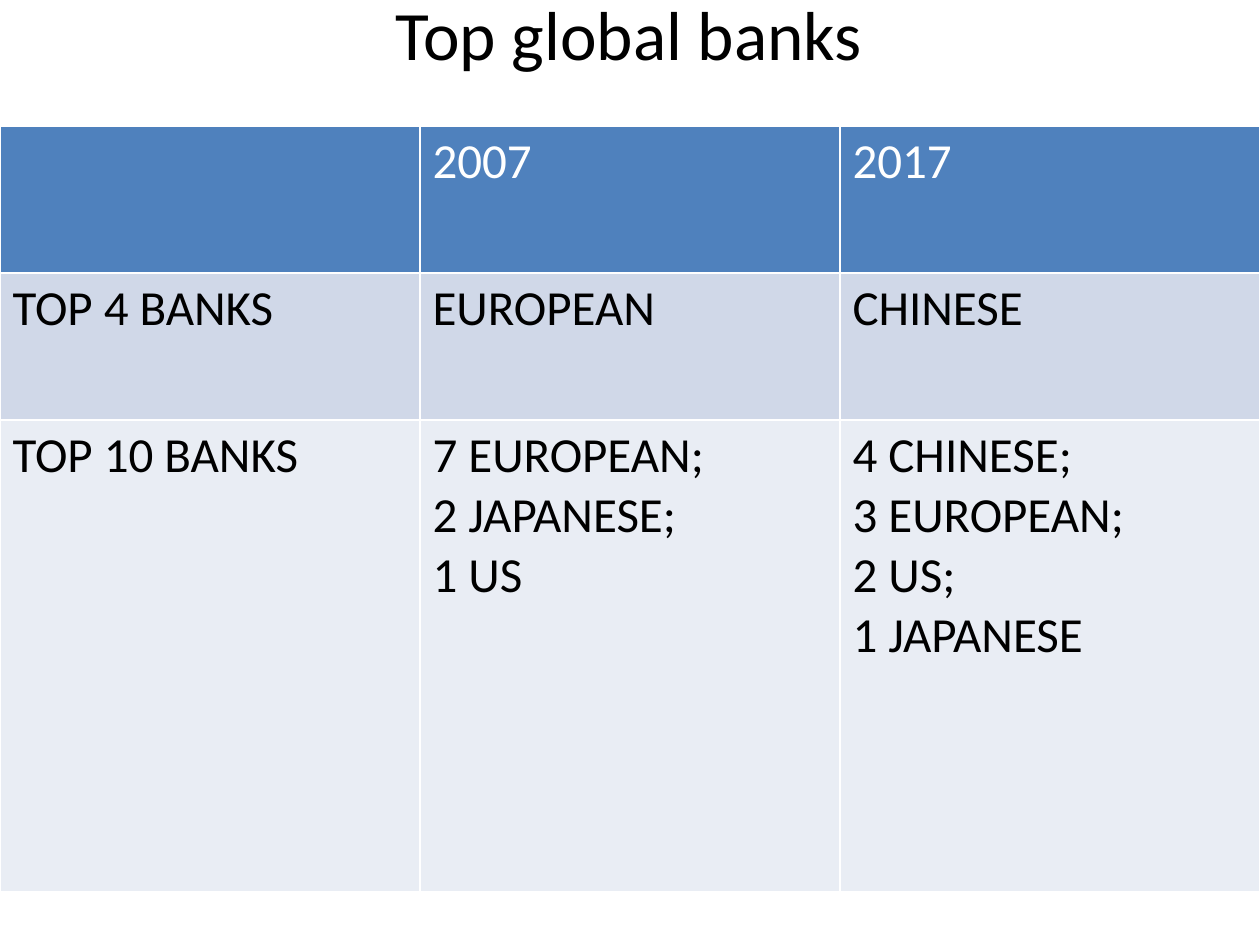
from pptx import Presentation
from pptx import util as u
from pptx.dml.color import RGBColor
from pptx.enum import text

PX = u.Inches(1) // 126
FONT = "Calibri"
BLACK = RGBColor(0x00, 0x00, 0x00)
WHITE = RGBColor(0xFF, 0xFF, 0xFF)
HEADER_BLUE = RGBColor(0x4F, 0x81, 0xBD)
BAND_DARK = RGBColor(0xD0, 0xD8, 0xE8)
BAND_LIGHT = RGBColor(0xE9, 0xED, 0xF4)

COLUMN_WIDTH = 420
# Each row: height, fill, text colour, cell texts
BANK_ROWS = [
    (147, HEADER_BLUE, WHITE, ["", "2007", "2017"]),
    (147, BAND_DARK, BLACK, ["TOP 4 BANKS", "EUROPEAN", "CHINESE"]),
    (472, BAND_LIGHT, BLACK, [
        "TOP 10 BANKS",
        "7 EUROPEAN;\n2 JAPANESE;\n1 US",
        "4 CHINESE;\n3 EUROPEAN;\n2 US;\n1 JAPANESE",
    ]),
]


def px(*lengths):
    return [u.Emu(length * PX) for length in lengths]


def format_runs(text_frame, size, color):
    for paragraph in text_frame.paragraphs:
        for run in paragraph.runs:
            run.font.name = FONT
            run.font.size = u.Pt(size)
            run.font.bold = False
            run.font.color.rgb = color


def add_title(slide, title):
    shape = slide.shapes.add_textbox(*px(62, 8, 1134, 50))
    text_frame = shape.text_frame
    text_frame.word_wrap = True
    text_frame.auto_size = text.MSO_AUTO_SIZE.NONE
    text_frame.vertical_anchor = text.MSO_ANCHOR.MIDDLE
    text_frame.text = title
    text_frame.paragraphs[0].alignment = text.PP_ALIGN.CENTER
    format_runs(text_frame, 39.6, BLACK)


def add_bank_table(slide, left, top):
    columns = len(BANK_ROWS[0][3])
    height = sum(row[0] for row in BANK_ROWS)
    table = slide.shapes.add_table(
        len(BANK_ROWS), columns, *px(left, top, columns * COLUMN_WIDTH, height)
    ).table
    for column in table.columns:
        column.width = px(COLUMN_WIDTH)[0]
    for row, (row_height, fill, color, values) in zip(table.rows, BANK_ROWS):
        row.height = px(row_height)[0]
        for cell, value in zip(row.cells, values):
            cell.fill.solid()
            cell.fill.fore_color.rgb = fill
            cell.text_frame.text = value
            format_runs(cell.text_frame, 28, color)


def main():
    presentation = Presentation()
    presentation.slide_width, presentation.slide_height = px(1260, 945)
    slide = presentation.slides.add_slide(presentation.slide_layouts[6])
    add_title(slide, "Top global banks")
    add_bank_table(slide, 0, 126)
    presentation.save("out.pptx")


if __name__ == "__main__":
    main()
